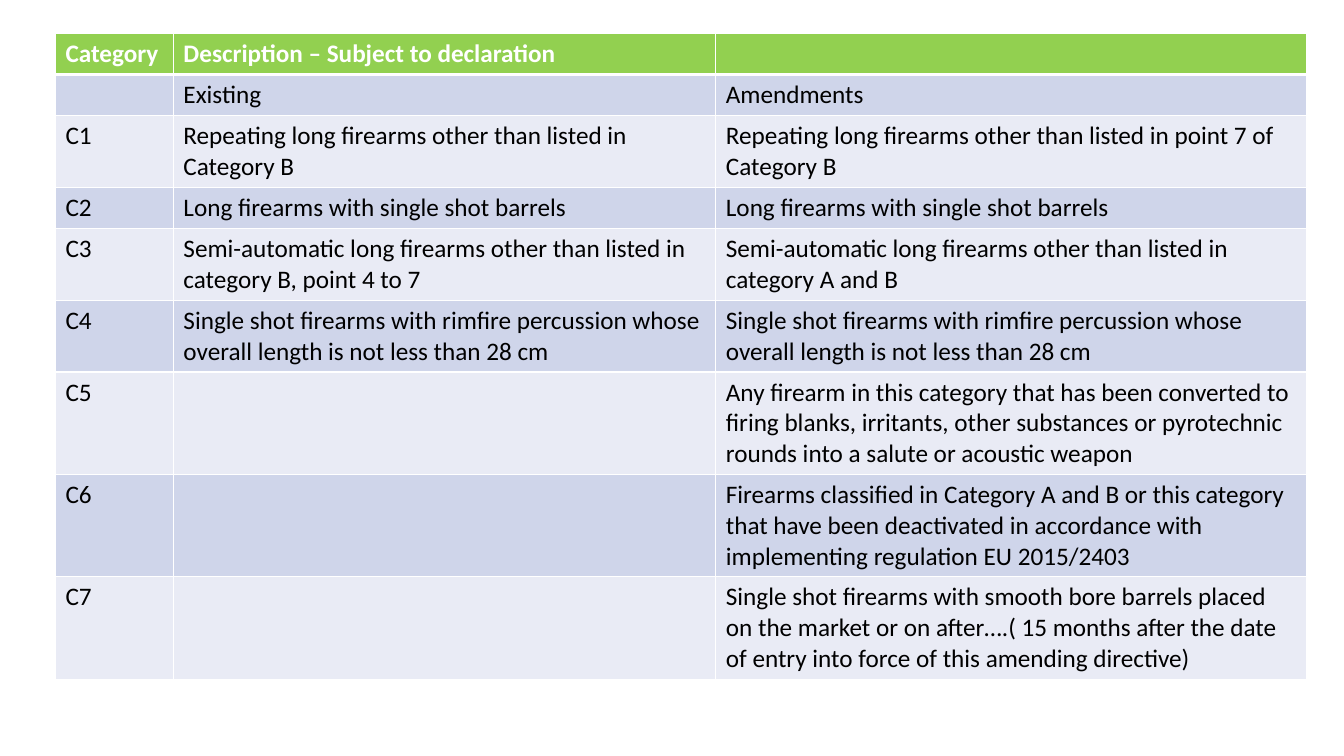
from lxml.etree import SubElement
from pptx import Presentation
from pptx.dml.color import RGBColor
from pptx.oxml.ns import qn
from pptx.util import Inches, Pt

COLORS = {
    "head": "92D050",
    "dark": "CFD5EA",
    "light": "E9EBF5",
    "white": "FFFFFF",
    "black": "000000",
}
WIDTHS = [1.17, 5.38, 5.86]
ROW = 0.41
SHOT = "Long firearms with single shot barrels"
RIM = ("Single shot firearms with rimfire percussion whose "
       "overall length is not less than 28 cm")
ROWS = [
    ("Category", "Description – Subject to declaration", ""),
    ("", "Existing", "Amendments"),
    ("C1", "Repeating long firearms other than listed in Category B",
     "Repeating long firearms other than listed in point 7 of Category B"),
    ("C2", SHOT, SHOT),
    ("C3", "Semi-automatic long firearms other than listed in "
     "category B, point 4 to 7",
     "Semi-automatic long firearms other than listed in category A and B"),
    ("C4", RIM, RIM),
    ("C5", "", "Any firearm in this category that has been converted to "
     "firing blanks, irritants, other substances or pyrotechnic rounds "
     "into a salute or acoustic weapon"),
    ("C6", "", "Firearms classified in Category A and B or this category "
     "that have been deactivated in accordance with implementing "
     "regulation EU 2015/2403"),
    ("C7", "", "Single shot firearms with smooth bore barrels placed on the "
     "market or on after….( 15 months after the date of entry into force "
     "of this amending directive)"),
]


def color(name):
    return RGBColor.from_string(COLORS[name])


def write(cell, text, size=18, ink="black", bold=False):
    par = cell.text_frame.paragraphs[0]
    par.font.size = Pt(size)
    if text:
        run = par.add_run()
        run.text = text
        run.font.name = "Calibri"
        run.font.size = Pt(size)
        run.font.bold = bold
        run.font.color.rgb = color(ink)


def border(cell, **sides):
    props = cell._tc.get_or_add_tcPr()
    for side, width in sides.items():
        line = SubElement(props, qn("a:ln" + side), w=str(Pt(width)))
        fill = SubElement(line, qn("a:solidFill"))
        SubElement(fill, qn("a:srgbClr"), val=COLORS["white"])


def paint(cell, name):
    cell.fill.solid()
    cell.fill.fore_color.rgb = color(name)


def add_grid(slide, left, top, width, height):
    frame = slide.shapes.add_table(
        len(ROWS), len(WIDTHS), Inches(left), Inches(top),
        Inches(width), Inches(height))
    table = frame.table
    for col, size in zip(table.columns, WIDTHS):
        col.width = Inches(size)
    for r, texts in enumerate(ROWS):
        # Rows grow to fit their text
        table.rows[r].height = Inches(ROW)
        head = r == 0
        band = "head" if head else "dark" if r % 2 else "light"
        for c, text in enumerate(texts):
            cell = table.cell(r, c)
            write(cell, text, ink="white" if head else "black", bold=head)
            # Thick rule between the header and the body
            border(cell, L=1, R=1, T=3 if r == 1 else 1, B=3 if head else 1)
            paint(cell, band)
    frame.height = Inches(height)


def main():
    deck = Presentation()
    deck.slide_width = Inches(13.33)
    deck.slide_height = Inches(7.5)
    slide = deck.slides.add_slide(deck.slide_layouts[6])
    # Category table
    add_grid(slide, 0.55, 0.33, 12.41, 6.32)
    deck.save("out.pptx")


if __name__ == "__main__":
    main()
